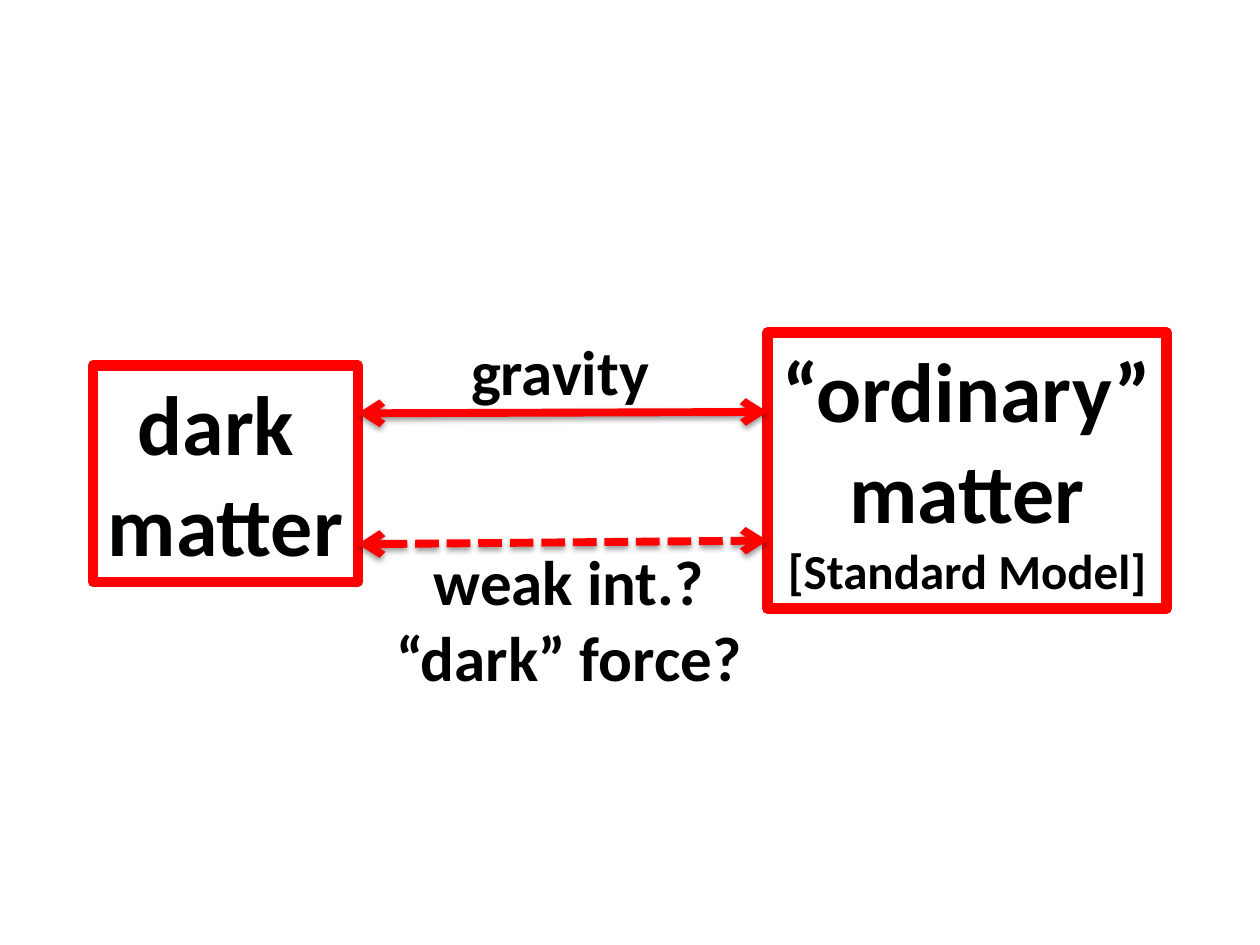
"""Build a slide on the forces linking dark matter and ordinary matter."""
import lxml.etree
import pptx
import pptx.dml.color
import pptx.enum.dml
import pptx.enum.shapes
import pptx.enum.text
import pptx.oxml
import pptx.oxml.ns
import pptx.util

Pt = pptx.util.Pt
CENTER = pptx.enum.text.PP_ALIGN.CENTER
LEFT = pptx.enum.text.PP_ALIGN.LEFT
SHADOW = (
    f'<a:effectLst {pptx.oxml.ns.nsdecls("a")}>'
    '<a:outerShdw blurRad="40000" dist="20000" dir="5400000" rotWithShape="0">'
    '<a:srgbClr val="000000"><a:alpha val="38000"/></a:srgbClr>'
    '</a:outerShdw></a:effectLst>'
)


def color(value):
    return pptx.dml.color.RGBColor.from_string(value)


def write_lines(shape, lines, sizes, alignment):
    text_frame = shape.text_frame
    text_frame.text = "\n".join(lines)
    text_frame.word_wrap = False
    text_frame.auto_size = pptx.enum.text.MSO_AUTO_SIZE.SHAPE_TO_FIT_TEXT
    text_frame.vertical_anchor = pptx.enum.text.MSO_ANCHOR.TOP
    for paragraph, size in zip(text_frame.paragraphs, sizes):
        paragraph.alignment = alignment
        for run in paragraph.runs:
            run.font.name = "Calibri"
            run.font.size = Pt(size)
            run.font.bold = True
            run.font.color.rgb = color("000000")


presentation = pptx.Presentation()
presentation.slide_width = Pt(720)
presentation.slide_height = Pt(540)
slide = presentation.slides.add_slide(presentation.slide_layouts[6])

matter_boxes = [
    ((53.3, 208.8, 151.2, 123.8), ["dark ", "matter"], [48, 48]),
    ((438.5, 190.1, 228.2, 157.7),
     ["“ordinary”", "matter", "[Standard Model]"], [48, 48, 28]),
]
for bounds, lines, sizes in matter_boxes:
    box = slide.shapes.add_shape(
        pptx.enum.shapes.MSO_SHAPE.RECTANGLE, *map(Pt, bounds))
    box.shadow.inherit = False
    box.fill.background()
    box.line.color.rgb = color("FF0000")
    box.line.width = Pt(6)
    write_lines(box, lines, sizes, CENTER)

forces = [
    (236.2, 235.4, None, (262.1, 186.5, 118.8, 51.1), ["gravity"], LEFT),
    (311, 308.9, pptx.enum.dml.MSO_LINE.SQUARE_DOT,
     (216.7, 306.7, 216.7, 94.3), ["weak int.?", "“dark” force? "], CENTER),
]
for start_y, end_y, dash, bounds, lines, alignment in forces:
    group = slide.shapes.add_group_shape()
    arrow = group.shapes.add_connector(
        pptx.enum.shapes.MSO_CONNECTOR.STRAIGHT,
        Pt(204.5), Pt(start_y), Pt(438.5), Pt(end_y))
    arrow.line.color.rgb = color("FF0000")
    arrow.line.width = Pt(4.5)
    if dash:
        arrow.line.dash_style = dash
    properties = arrow.element.spPr
    outline = properties.find(pptx.oxml.ns.qn("a:ln"))
    for end in ("a:headEnd", "a:tailEnd"):
        lxml.etree.SubElement(outline, pptx.oxml.ns.qn(end), type="arrow")
    properties.append(pptx.oxml.parse_xml(SHADOW))
    label = group.shapes.add_textbox(*map(Pt, bounds))
    write_lines(label, lines, [36] * len(lines), alignment)

presentation.save("out.pptx")
